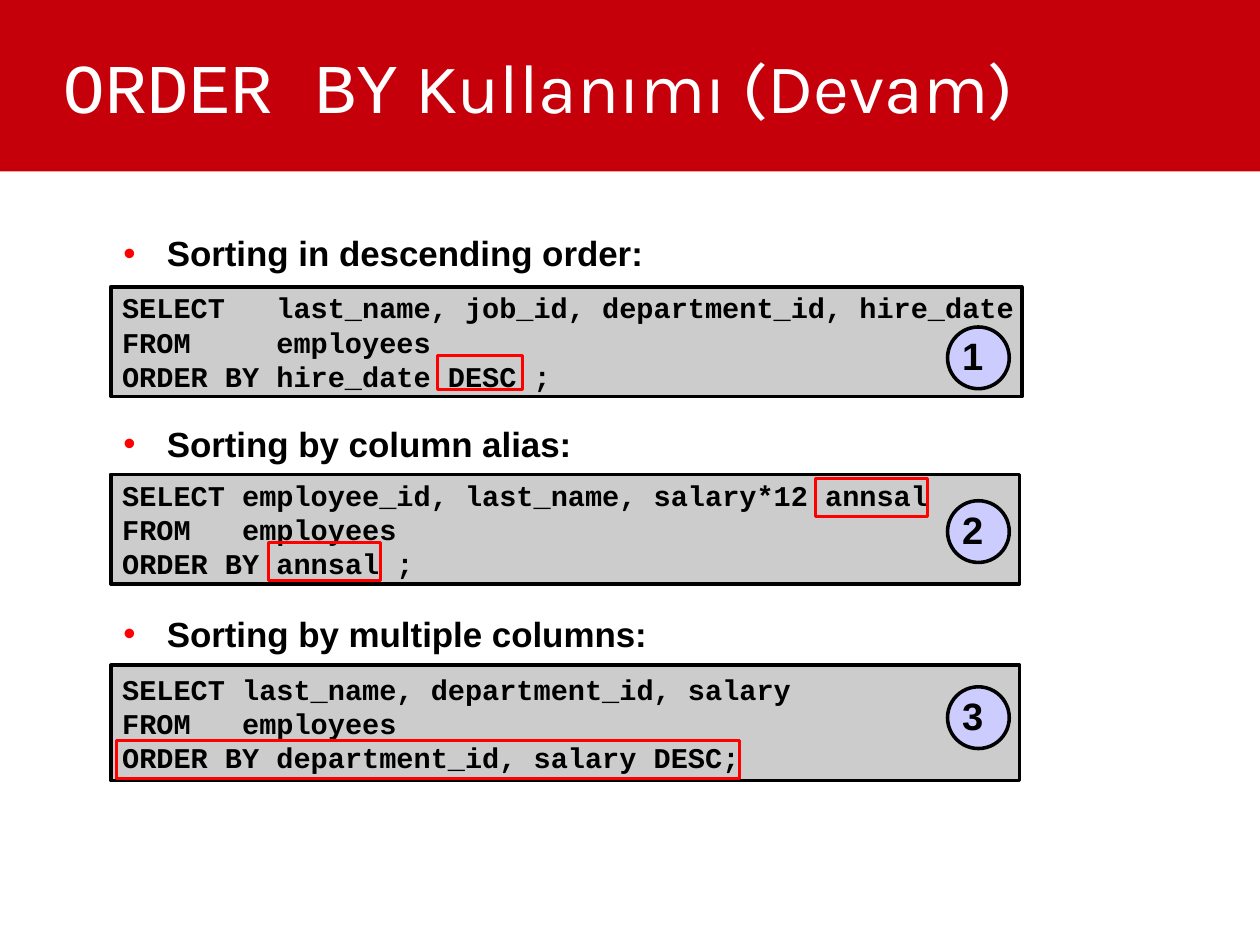
"""Build the ORDER BY slide: three sorting examples with highlighted SQL."""
from lxml import etree
from pptx import Presentation
from pptx.dml.color import RGBColor
from pptx.enum.shapes import MSO_SHAPE
from pptx.enum.text import MSO_ANCHOR, MSO_AUTO_SIZE, PP_ALIGN
from pptx.oxml.ns import qn
from pptx.util import Cm, Inches, Pt

RECT, OVAL = MSO_SHAPE.RECTANGLE, MSO_SHAPE.OVAL
TOP, MIDDLE = MSO_ANCHOR.TOP, MSO_ANCHOR.MIDDLE
LEFT, NO_FIT = PP_ALIGN.LEFT, MSO_AUTO_SIZE.NONE

TITLE = [("ORDER BY", "Courier New"), (" Kullanımı (Devam)", "Karla")]
EXAMPLES = [
    {"heading": "Sorting in descending order:",
     "code": ["SELECT   last_name, job_id, department_id, hire_date",
              "FROM     employees",
              "ORDER BY hire_date DESC ;"],
     "top": 2.51, "size": (7.97, 0.96), "badge_row": 1.17,
     "marks": [(18.4, 2, 4.93, 1)]},
    {"heading": "Sorting by column alias:",
     "code": ["SELECT employee_id, last_name, salary*12 annsal",
              "FROM   employees",
              "ORDER BY annsal ;"],
     "top": 4.15, "size": (7.95, 0.96), "badge_row": 0.77,
     "marks": [(40.45, 0.13, 6.53, 1.1), (8.53, 2, 6.53, 1.1)]},
    {"heading": "Sorting by multiple columns:",
     "code": ["SELECT last_name, department_id, salary",
              "FROM   employees",
              "ORDER BY department_id, salary DESC;"],
     "top": 5.82, "size": (7.95, 1.01), "badge_row": 0.63,
     "marks": [(-0.33, 2.2, 36.33, 1.1)]},
]
COLORS = {"banner": "C5000B", "white": "FFFFFF", "black": "000000",
          "panel": "CCCCCC", "badge": "CCCCFF", "mark": "FF0000"}

SLIDE_W, SLIDE_H = Cm(28), Cm(21)
PANEL_X, INSET = 0.97, 0.1
CHAR_W, ROW_H = 0.15, 0.3
BADGE_X, BADGE_D = 8.29, 0.54
HEADING_SIZE, HEADING_GAP = 22, 93.5


def color(name):
    return RGBColor.from_string(COLORS[name])


def set_frame(tf, anchor, wrap, dx, dy):
    tf.auto_size = NO_FIT
    tf.word_wrap = wrap
    tf.vertical_anchor = anchor
    tf.margin_left = tf.margin_right = Inches(dx)
    tf.margin_top = tf.margin_bottom = Inches(dy)


def add_box(s, kind, x, y, w, h, fill=None, line=None, width=2.25):
    sp = s.shapes.add_shape(kind, *map(Inches, (x, y, w, h)))
    sp.shadow.inherit = False
    if fill:
        sp.fill.solid()
        sp.fill.fore_color.rgb = color(fill)
    else:
        sp.fill.background()
    if line:
        sp.line.color.rgb = color(line)
        sp.line.width = Pt(width)
    else:
        sp.line.fill.background()
    return sp


def write_lines(tf, lines, font, size):
    for i, text in enumerate(lines):
        p = tf.paragraphs[0] if i == 0 else tf.add_paragraph()
        p.text = text
        p.alignment = LEFT
        p.font.name, p.font.size, p.font.bold = font, Pt(size), True
        p.font.color.rgb = color("black")


def add_bullet(p):
    pPr = p._p.get_or_add_pPr()
    pPr.set("marL", str(Inches(0.51)))
    pPr.set("indent", str(Inches(-0.38)))
    bu_color = etree.Element(qn("a:buClr"))
    etree.SubElement(bu_color, qn("a:srgbClr"), val=COLORS["mark"])
    bu_font = etree.Element(qn("a:buFont"), typeface="Arial")
    bu_char = etree.Element(qn("a:buChar"), char="•")
    for element in (bu_color, bu_font, bu_char):
        pPr.insert_element_before(element, "a:tabLst", "a:defRPr")


def add_title(s):
    banner = add_box(s, RECT, 0, 0, SLIDE_W.inches, 1.5, "banner")
    title = s.shapes.title
    banner._element.addnext(title._element)
    title.left, title.top, title.width, title.height = map(
        Inches, (0.55, 0.06, SLIDE_W.inches - 0.55, 1.38))
    set_frame(title.text_frame, MIDDLE, True, 0, 0)
    p = title.text_frame.paragraphs[0]
    p.alignment = LEFT
    p.font.size = Pt(44)
    p.font.color.rgb = color("white")
    for text, font in TITLE:
        r = p.add_run()
        r.text, r.font.name = text, font


def add_headings(s):
    tf = s.shapes.add_textbox(*map(Inches, (0.94, 2.02, 8.66, 3.7))).text_frame
    set_frame(tf, TOP, True, 0.01, 0.01)
    write_lines(tf, [e["heading"] for e in EXAMPLES], "Arial", HEADING_SIZE)
    for i, p in enumerate(tf.paragraphs):
        p.space_before = Pt(HEADING_GAP if i else 0)
        add_bullet(p)


def add_example(s, number, example):
    top = example["top"]
    panel = add_box(s, RECT, PANEL_X, top, *example["size"], "panel", "black")
    set_frame(panel.text_frame, MIDDLE, False, INSET, 0.05)
    write_lines(panel.text_frame, example["code"], "Courier New", 18)
    for col, row, cols, rows in example["marks"]:
        add_box(s, RECT, PANEL_X + INSET + col * CHAR_W, top + row * ROW_H,
                cols * CHAR_W, rows * ROW_H, line="mark", width=2)
    badge = add_box(s, OVAL, BADGE_X, top + example["badge_row"] * ROW_H,
                    BADGE_D, BADGE_D, "badge", "black")
    set_frame(badge.text_frame, MIDDLE, False, 0.05, 0.05)
    write_lines(badge.text_frame, [str(number)], "Arial", 24)
    badge.text_frame.paragraphs[0].line_spacing = 0.95


def main():
    prs = Presentation()
    prs.slide_width, prs.slide_height = SLIDE_W, SLIDE_H
    s = prs.slides.add_slide(prs.slide_layouts[5])
    add_title(s)
    add_headings(s)
    for number, example in enumerate(EXAMPLES, 1):
        add_example(s, number, example)
    prs.save("out.pptx")


if __name__ == "__main__":
    main()
